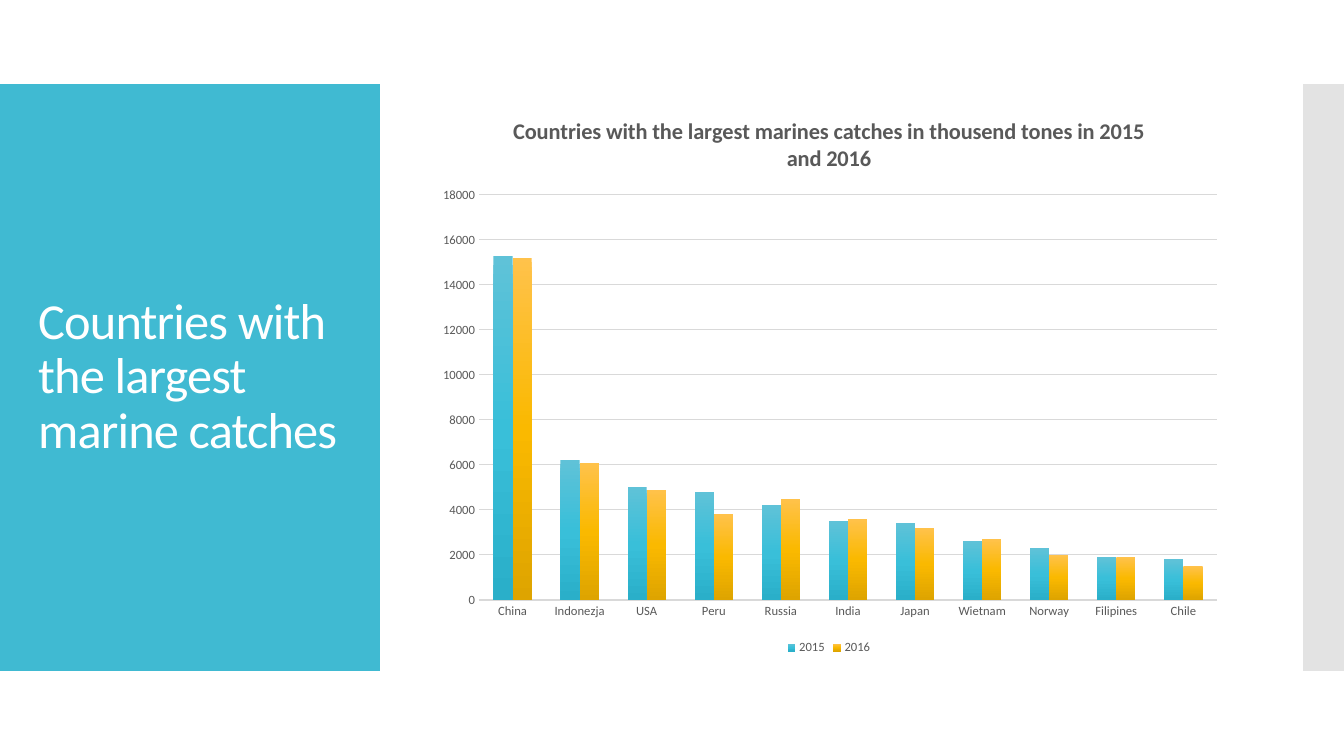
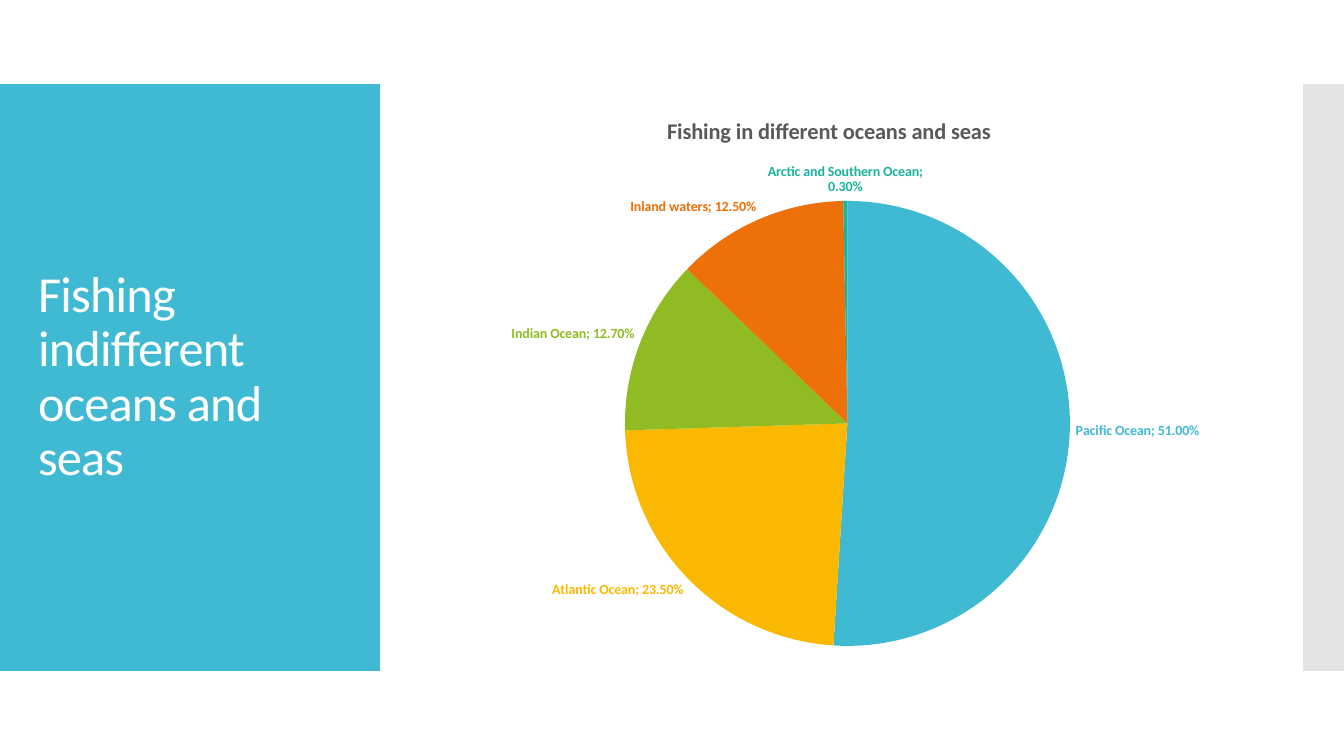
from lxml import etree
from pptx import Presentation
from pptx.chart.data import CategoryChartData
from pptx.dml.color import RGBColor
from pptx.enum.chart import XL_CHART_TYPE, XL_LABEL_POSITION, XL_LEGEND_POSITION, XL_TICK_MARK
from pptx.enum.shapes import MSO_SHAPE
from pptx.enum.text import MSO_ANCHOR, MSO_AUTO_SIZE, PP_ALIGN
from pptx.oxml.ns import qn
from pptx.util import Emu, Pt

COLUMN, PIE = XL_CHART_TYPE.COLUMN_CLUSTERED, XL_CHART_TYPE.PIE
OUTSIDE_END = XL_LABEL_POSITION.OUTSIDE_END
BOTTOM = XL_LEGEND_POSITION.BOTTOM
NO_TICK = XL_TICK_MARK.NONE
RECTANGLE = MSO_SHAPE.RECTANGLE
MIDDLE, LEFT, NO_FIT = MSO_ANCHOR.MIDDLE, PP_ALIGN.LEFT, MSO_AUTO_SIZE.NONE

EMU_PER_INCH, PX_PER_INCH = 914400, 100.8
TITLE_ONLY = 5
FONT = "Calibri"
COLOURS = {
    "white": "FFFFFF", "black": "000000", "text": "595959", "rule": "D9D9D9",
    "side": "C8C8C8", "blue": "40BAD2", "amber": "FAB900", "green": "90BB23",
    "orange": "EE7008", "teal": "1AB39F",
}
GRADIENTS = [("5FC2D8", "39BFD9", "2AAFC9"), ("FFC24B", "FAB900", "DEA400")]
SLICES = ["blue", "amber", "green", "orange", "teal"]
CHART_BOX = (426, 95, 806, 564)

CATCHES = {
    "China": (15300, 15200), "Indonezja": (6200, 6100), "USA": (5000, 4900),
    "Peru": (4800, 3800), "Russia": (4200, 4500), "India": (3500, 3600),
    "Japan": (3400, 3200), "Wietnam": (2600, 2700), "Norway": (2300, 2000),
    "Filipines": (1900, 1900), "Chile": (1800, 1500),
}
OCEANS = {
    "Pacific Ocean": 0.51, "Atlantic Ocean": 0.235, "Indian Ocean": 0.127,
    "Inland waters": 0.125, "Arctic and Southern Ocean": 0.003,
}


def px(length):
    """Turn pixels into EMU."""
    return Emu(round(length * EMU_PER_INCH / PX_PER_INCH))


def colour(name):
    """Look up a named colour."""
    return RGBColor.from_string(COLOURS[name])


def style_font(font, size, name, bold=False):
    """Set typeface, size, colour and weight."""
    font.name, font.size, font.bold = FONT, Pt(size), bold
    font.color.rgb = colour(name)


def add_band(page, box, name, opacity=100):
    """Place a plain band behind the title."""
    band = page.shapes.add_shape(RECTANGLE, *map(px, box))
    band.shadow.inherit = False
    band.fill.solid()
    band.fill.fore_color.rgb = colour(name)
    band.line.fill.background()
    if opacity < 100:
        tone = band.element.spPr.find(".//" + qn("a:srgbClr"))
        etree.SubElement(tone, qn("a:alpha"), val=str(opacity * 1000))
    page.shapes.title.element.addprevious(band.element)


def add_page(deck, heading):
    """Add a page with the shared bands and title."""
    page = deck.slides.add_slide(deck.slide_layouts[TITLE_ONLY])
    add_band(page, (0, 84, 380, 587), "blue")
    add_band(page, (1303, 84, 41, 587), "side", 50)
    title = page.shapes.title
    title.left, title.top, title.width, title.height = map(px, (28, 124, 325, 507))
    frame = title.text_frame
    frame.text = heading
    frame.word_wrap, frame.auto_size, frame.vertical_anchor = True, NO_FIT, MIDDLE
    para = frame.paragraphs[0]
    para.alignment, para.line_spacing = LEFT, 0.9
    style_font(para.font, 36, "white")
    para.font._element.set("spc", "-60")
    return page


def place_plot(chart, box):
    """Fix the inner plot area at a page position."""
    left, top, width, height = CHART_BOX
    area = chart.element.find(".//" + qn("c:plotArea"))
    for old in area.findall(qn("c:layout")):
        area.remove(old)
    layout = etree.Element(qn("c:layout"))
    manual = etree.SubElement(layout, qn("c:manualLayout"))
    settings = {
        "layoutTarget": "inner", "xMode": "edge", "yMode": "edge",
        "x": (box[0] - left) / width, "y": (box[1] - top) / height,
        "w": box[2] / width, "h": box[3] / height,
    }
    for tag, value in settings.items():
        etree.SubElement(manual, qn("c:" + tag), val=str(value))
    area.insert(0, layout)


def add_chart(page, kind, data, heading, plot_box):
    """Add a titled chart with the shared type style."""
    chart = page.shapes.add_chart(kind, *map(px, CHART_BOX), data).chart
    style_font(chart.font, 10, "black")
    chart.has_title = True
    frame = chart.chart_title.text_frame
    frame.text = heading
    style_font(frame.paragraphs[0].font, 16, "text", True)
    chart.has_legend = False
    place_plot(chart, plot_box)
    return chart


def fill_gradient(series, tones):
    """Fill a series from top to bottom with evenly spaced tones."""
    fill = series.format.fill
    fill.gradient()
    fill.gradient_angle = 270
    stops = series.format._element.find(".//" + qn("a:gsLst"))
    for old in list(stops):
        stops.remove(old)
    for index, tone in enumerate(tones):
        position = index * 100000 // (len(tones) - 1)
        stop = etree.SubElement(stops, qn("a:gs"), pos=str(position))
        etree.SubElement(stop, qn("a:srgbClr"), val=tone)


def style_axis(axis):
    """Give an axis small grey labels and no ticks."""
    axis.major_tick_mark = axis.minor_tick_mark = NO_TICK
    style_font(axis.tick_labels.font, 9, "text")


def style_rule(line, width):
    """Draw a light grey chart line."""
    line.color.rgb = colour("rule")
    line.width = Pt(width)


def add_catches_chart(page):
    """Compare the catches of two years by country."""
    data = CategoryChartData()
    data.categories = list(CATCHES)
    for year, values in zip(("2015", "2016"), zip(*CATCHES.values())):
        data.add_series(year, values)
    heading = "Countries with the largest marines catches in thousend tones in 2015 and 2016"
    chart = add_chart(page, COLUMN, data, heading, (479, 195, 738, 405))
    plot = chart.plots[0]
    plot.gap_width, plot.overlap, plot.vary_by_categories = 150, 0, False
    for series, tones in zip(plot.series, GRADIENTS):
        fill_gradient(series, tones)
    countries, amounts = chart.category_axis, chart.value_axis
    style_axis(countries)
    style_rule(countries.format.line, 1)
    style_axis(amounts)
    amounts.format.line.fill.background()
    amounts.minimum_scale, amounts.maximum_scale, amounts.major_unit = 0, 18000, 2000
    style_rule(amounts.major_gridlines.format.line, 0.75)
    chart.has_legend = True
    chart.legend.position = BOTTOM
    chart.legend.include_in_layout = False
    style_font(chart.legend.font, 9, "text")


def add_oceans_chart(page):
    """Show each ocean's share as a labelled pie."""
    data = CategoryChartData(number_format="0.00%")
    data.categories = list(OCEANS)
    data.add_series("Series 1", OCEANS.values())
    chart = add_chart(page, PIE, data, "Fishing in different oceans and seas",
                      (625, 201, 445, 445))
    plot = chart.plots[0]
    plot.vary_by_categories = True
    for index, name in enumerate(SLICES):
        point = plot.series[0].points[index]
        point.format.fill.solid()
        point.format.fill.fore_color.rgb = colour(name)
        style_font(point.data_label.font, 10, name, True)
        point.data_label.position = OUTSIDE_END
    for label in chart.element.iter(qn("c:dLbl")):
        number = etree.Element(qn("c:numFmt"), formatCode="0.00%", sourceLinked="0")
        label.find(qn("c:idx")).addnext(number)
        label.find(qn("c:showCatName")).set("val", "1")
        etree.SubElement(label, qn("c:separator")).text = "; "


def main():
    """Build and save the deck."""
    deck = Presentation()
    deck.slide_width, deck.slide_height = px(1344), px(756)
    add_catches_chart(add_page(deck, "Countries with the largest marine catches"))
    add_oceans_chart(add_page(deck, "Fishing indifferent oceans and seas"))
    deck.save("out.pptx")


if __name__ == "__main__":
    main()
